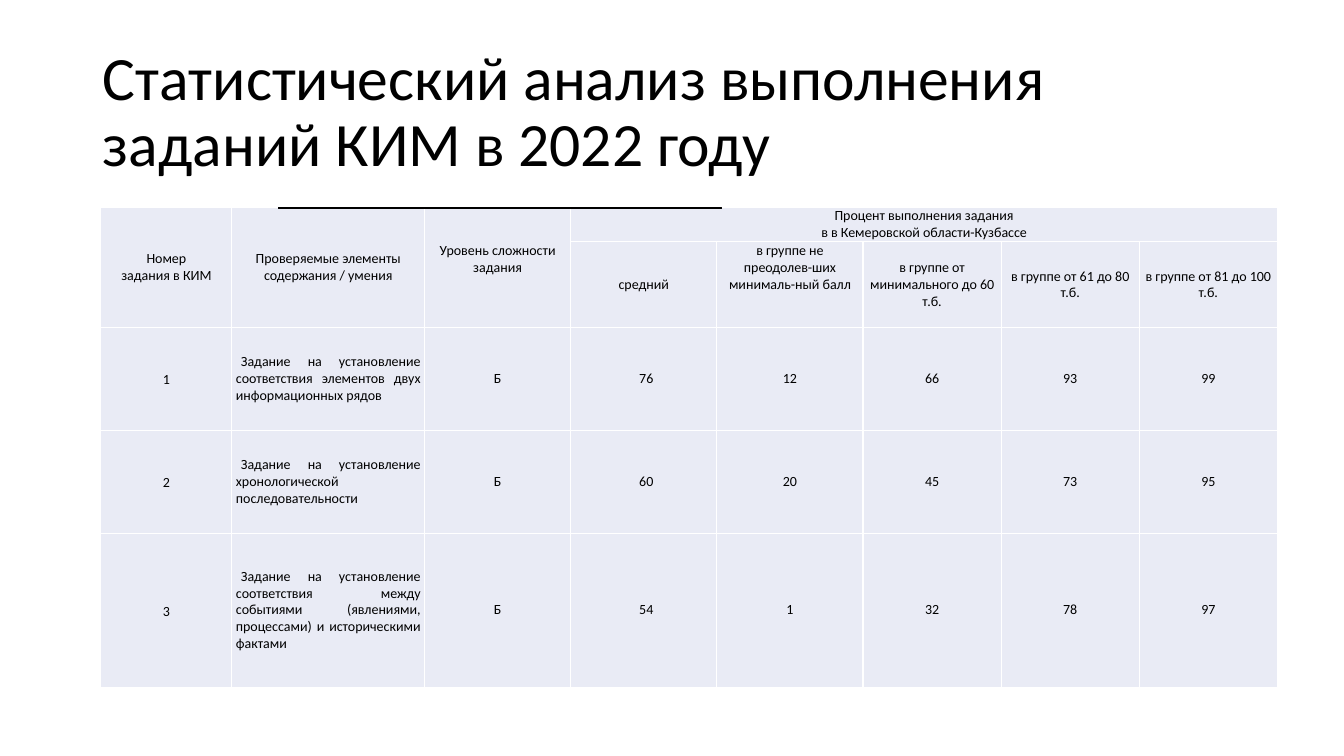
from dataclasses import dataclass
from pptx import Presentation, util as u
from pptx.dml.color import RGBColor
from pptx.enum import shapes, text
from pptx.oxml import parse_xml
from pptx.oxml.ns import nsdecls

MID, TOP = text.MSO_ANCHOR.MIDDLE, text.MSO_ANCHOR.TOP
LEFT, MIDST, JUST = text.PP_ALIGN.LEFT, text.PP_ALIGN.CENTER, text.PP_ALIGN.JUSTIFY


@dataclass(frozen=True)
class Theme:
    font: str = "Calibri"
    ink: str = "000000"
    fill: str = "E9EBF5"
    edge: str = "FFFFFF"
    head: int = 44
    body: int = 10


class Deck:
    def __init__(self, theme):
        self.theme = theme
        self.file = Presentation()
        self.file.slide_width = u.Inches(13.33)
        self.file.slide_height = u.Inches(7.5)
        self.slide = self.file.slides.add_slide(self.file.slide_layouts[5])

    def run(self, para, words, size):
        run = para.add_run()
        run.text = words
        run.font.name = self.theme.font
        run.font.size = u.Pt(size)
        run.font.color.rgb = RGBColor.from_string(self.theme.ink)

    def title(self, words, box):
        shape = self.slide.shapes.title
        shape.left, shape.top, shape.width, shape.height = map(u.Inches, box)
        frame = shape.text_frame
        frame.word_wrap = True
        frame.auto_size = text.MSO_AUTO_SIZE.NONE
        frame.vertical_anchor = MID
        para = frame.paragraphs[0]
        para.alignment = LEFT
        para.line_spacing = 0.9
        self.run(para, words, self.theme.head)

    def table(self, box, cols, rows):
        shape = self.slide.shapes.add_table(len(rows), len(cols), *map(u.Inches, box))
        grid = shape.table
        for col, wide in zip(grid.columns, cols):
            col.width = u.Inches(wide)
        for row, high in zip(grid.rows, rows):
            row.height = u.Inches(high)
        for cell in grid.iter_cells():
            self.style(cell)
        return grid

    def style(self, cell):
        props = cell._tc.get_or_add_tcPr()
        for side in ("lnL", "lnR", "lnT", "lnB"):
            props.append(parse_xml(
                f'<a:{side} {nsdecls("a")} w="12700"><a:solidFill>'
                f'<a:srgbClr val="{self.theme.edge}"/></a:solidFill></a:{side}>'))
        cell.fill.solid()
        cell.fill.fore_color.rgb = RGBColor.from_string(self.theme.fill)
        cell.margin_left = cell.margin_right = u.Inches(0.04)
        cell.margin_top = cell.margin_bottom = 0
        cell.vertical_anchor = MID

    def cell(self, cell, words, align=MIDST, indent=0, anchor=MID):
        cell.vertical_anchor = anchor
        para = cell.text_frame.paragraphs[0]
        para.alignment = align
        if indent:
            para._p.get_or_add_pPr().set("indent", str(u.Inches(indent)))
        for i, line in enumerate(words.split("\n")):
            if i:
                para.add_line_break()
            self.run(para, line, self.theme.body)
        return para

    def bar(self, box):
        shape = self.slide.shapes.add_shape(
            shapes.MSO_SHAPE.RECTANGLE, *map(u.Inches, box))
        shape.shadow.inherit = False
        shape.fill.solid()
        shape.fill.fore_color.rgb = RGBColor.from_string(self.theme.ink)
        shape.line.color.rgb = RGBColor.from_string(self.theme.ink)
        shape.line.width = u.Pt(0.75)


HEADS = ["Номер\nзадания в КИМ",
         "Проверяемые элементы содержания / умения",
         "Уровень сложности задания"]
SCOPE = "Процент выполнения задания\nв в Кемеровской области-Кузбассе"
GROUPS = ["средний",
          "в группе не преодолев-ших минималь-ный балл",
          "в группе от минимального до 60 т.б.",
          "в группе от 61 до 80 т.б.",
          "в группе от 81 до 100 т.б."]
TASKS = [
    ("Задание на установление соответствия элементов двух информационных рядов",
     "Б", (76, 12, 66, 93, 99)),
    ("Задание на установление хронологической последовательности",
     "Б", (60, 20, 45, 73, 95)),
    ("Задание на установление соответствия между событиями (явлениями, "
     "процессами) и историческими фактами",
     "Б", (54, 1, 32, 78, 97)),
]


def main():
    deck = Deck(Theme())
    deck.title("Статистический анализ выполнения заданий КИМ в 2022 году",
               (0.92, 0.4, 11.5, 1.45))
    grid = deck.table((1, 2.06, 11.69, 4.76),
                      [1.3, 1.91] + [1.45] * 3 + [1.37] * 3,
                      [0.34, 0.85, 1.02, 1.02, 1.53])

    for c, words in enumerate(HEADS):
        grid.cell(0, c).merge(grid.cell(1, c))
        deck.cell(grid.cell(0, c), words)
    grid.cell(0, 2).margin_bottom = u.Inches(0.17)
    grid.cell(0, 3).merge(grid.cell(0, 7))
    deck.cell(grid.cell(0, 3), SCOPE, anchor=TOP)
    for c, words in enumerate(GROUPS, 3):
        deck.cell(grid.cell(1, c), words, anchor=TOP if c == 4 else MID)

    for n, (task, level, rates) in enumerate(TASKS, 1):
        row = n + 1
        para = deck.cell(grid.cell(row, 0), str(n))
        para.line_spacing = 1.15
        para.space_after = u.Pt(10)
        deck.cell(grid.cell(row, 1), task, JUST, 0.05)
        deck.cell(grid.cell(row, 2), level, indent=-0.08)
        for c, rate in enumerate(rates, 3):
            deck.cell(grid.cell(row, c), str(rate), indent=0.05 if c == 3 else 0)

    deck.bar((2.76, 2.06, 4.4, 0.01))
    deck.file.save("out.pptx")


if __name__ == "__main__":
    main()
